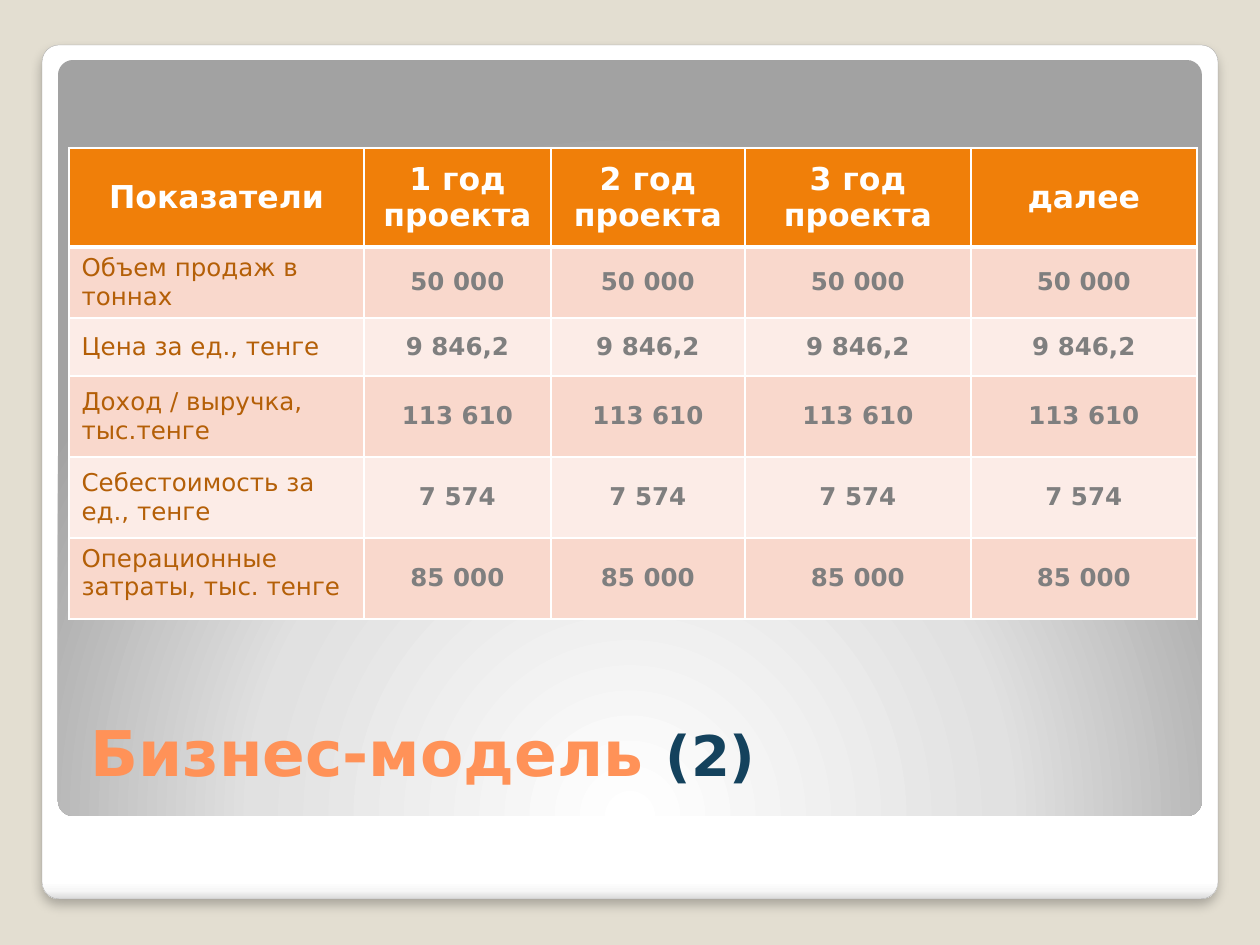
from dataclasses import dataclass

from lxml import etree
from pptx import Presentation
from pptx.dml.color import RGBColor
from pptx.enum.shapes import MSO_SHAPE
from pptx.enum.text import MSO_ANCHOR, MSO_AUTO_SIZE, PP_ALIGN
from pptx.oxml.ns import qn
from pptx.util import Emu, Pt

ROUNDED = MSO_SHAPE.ROUNDED_RECTANGLE
TOP, MIDDLE, BOTTOM = MSO_ANCHOR.TOP, MSO_ANCHOR.MIDDLE, MSO_ANCHOR.BOTTOM
LEFT, CENTER = PP_ALIGN.LEFT, PP_ALIGN.CENTER
NO_FIT = MSO_AUTO_SIZE.NONE
TITLE_ONLY = 5
PX_PER_INCH = 126


@dataclass(frozen=True)
class Theme:
    font: str = "DejaVu Sans"
    background: str = "E3DED1"
    outline: str = "A4A4A4"
    shadow: str = "000000"
    title: str = "FF9258"
    number: str = "14425D"
    header: str = "F07F09"
    white: str = "FFFFFF"
    label: str = "B45F07"
    value: str = "7F7F7F"
    bands: tuple = ("F9D8CC", "FCECE7")
    card: tuple = ((0, "FFFFFF"), (98, "FFFFFF"), (99, "F7F7F7"), (100, "DADADA"))
    panel: tuple = ((0, "FFFFFF"), (55, "E1E1E1"), (100, "A2A2A2"))
    title_size: int = 36
    number_size: int = 32
    header_size: int = 18
    body_size: int = 14


THEME = Theme()

HEADERS = ("Показатели", "1 год проекта", "2 год проекта", "3 год проекта", "далее")
INDICATORS = (
    ("Объем продаж в тоннах", "50 000"),
    ("Цена за ед., тенге", "9 846,2"),
    ("Доход / выручка, тыс.тенге", "113 610"),
    ("Себестоимость за ед., тенге", "7 574"),
    ("Операционные затраты, тыс. тенге", "85 000"),
)
COLUMN_WIDTHS = (295, 187, 194, 226, 226)
ROW_HEIGHTS = (99, 71, 58, 81, 81, 81)


def px(length):
    return Emu(round(length * 914400 / PX_PER_INCH))


def add_node(parent, tag, **attributes):
    values = {name: str(value) for name, value in attributes.items()}
    return etree.SubElement(parent, qn(tag), values)


def style_span(span, size, color, bold=True):
    span.font.name = THEME.font
    span.font.size = Pt(size)
    span.font.bold = bold
    span.font.color.rgb = RGBColor.from_string(color)


def set_gradient(shape, stops):
    shape.fill.gradient()
    gradient = shape.element.spPr.find(qn("a:gradFill"))
    for child in list(gradient):
        gradient.remove(child)
    stop_list = add_node(gradient, "a:gsLst")
    for position, color in stops:
        stop = add_node(stop_list, "a:gs", pos=position * 1000)
        add_node(stop, "a:srgbClr", val=color)
    return gradient


def add_rounded(page, left, top, width, height):
    box = page.shapes.add_shape(ROUNDED, px(left), px(top), px(width), px(height))
    box.adjustments[0] = 0.02
    box.shadow.inherit = False
    return box


def add_card(page):
    card = add_rounded(page, 42, 45, 1176, 854)
    gradient = set_gradient(card, THEME.card)
    add_node(gradient, "a:lin", ang=90 * 60000, scaled=0)
    card.line.color.rgb = RGBColor.from_string(THEME.outline)
    card.line.width = Pt(0.16)
    effects = card.element.spPr.find(qn("a:effectLst"))
    shadow = add_node(effects, "a:outerShdw", blurRad=Pt(6), dist=Pt(4),
                      dir=90 * 60000, algn="t", rotWithShape=0)
    color = add_node(shadow, "a:srgbClr", val=THEME.shadow)
    add_node(color, "a:alpha", val=25000)


def add_panel(page):
    panel = add_rounded(page, 58, 60, 1144, 756)
    gradient = set_gradient(panel, THEME.panel)
    focus = add_node(gradient, "a:path", path="circle")
    add_node(focus, "a:fillToRect", l=50000, t=175000, r=50000, b=-75000)
    panel.line.fill.background()


def place_title(page):
    title = page.shapes.title
    title.element.getparent().append(title.element)
    title.left, title.top, title.width, title.height = px(78), px(650), px(1128), px(145)
    frame = title.text_frame
    frame.text = "Бизнес-модель "
    frame.word_wrap = True
    frame.auto_size = NO_FIT
    frame.vertical_anchor = BOTTOM
    para = frame.paragraphs[0]
    para.alignment = LEFT
    style_span(para.runs[0], THEME.title_size, THEME.title)
    number = para.add_run()
    number.text = "(2)"
    style_span(number, THEME.number_size, THEME.number)


def set_borders(cell, top=1, bottom=1):
    properties = cell._tc.get_or_add_tcPr()
    widths = {"a:lnL": 1, "a:lnR": 1, "a:lnT": top, "a:lnB": bottom}
    for index, (side, width) in enumerate(widths.items()):
        border = add_node(properties, side, w=Pt(width))
        fill = add_node(border, "a:solidFill")
        add_node(fill, "a:srgbClr", val=THEME.white)
        properties.insert(index, border)


def fill_cell(cell, text, fill, size, color, bold=True, align=CENTER, anchor=MIDDLE):
    cell.text_frame.text = text
    cell.vertical_anchor = anchor
    cell.fill.solid()
    cell.fill.fore_color.rgb = RGBColor.from_string(fill)
    para = cell.text_frame.paragraphs[0]
    para.alignment = align
    style_span(para.runs[0], size, color, bold)


def add_indicator_table(page):
    frame = page.shapes.add_table(len(ROW_HEIGHTS), len(COLUMN_WIDTHS), px(69), px(148),
                                  px(sum(COLUMN_WIDTHS)), px(sum(ROW_HEIGHTS)))
    table = frame.table
    table.horz_banding = False
    for column, width in zip(table.columns, COLUMN_WIDTHS):
        column.width = px(width)
    for row, height in zip(table.rows, ROW_HEIGHTS):
        row.height = px(height)

    for column, header in enumerate(HEADERS):
        cell = table.cell(0, column)
        fill_cell(cell, header, THEME.header, THEME.header_size, THEME.white)
        set_borders(cell, bottom=3)

    for row, (label, value) in enumerate(INDICATORS, start=1):
        band = THEME.bands[(row - 1) % 2]
        label_anchor = TOP if row == len(INDICATORS) else MIDDLE
        fill_cell(table.cell(row, 0), label, band, THEME.body_size, THEME.label,
                  bold=False, align=LEFT, anchor=label_anchor)
        for column in range(1, len(HEADERS)):
            fill_cell(table.cell(row, column), value, band, THEME.body_size, THEME.value)
        for cell in table.rows[row].cells:
            set_borders(cell, top=3 if row == 1 else 1)


def main():
    deck = Presentation()
    deck.slide_width, deck.slide_height = px(1260), px(945)
    page = deck.slides.add_slide(deck.slide_layouts[TITLE_ONLY])
    page.background.fill.solid()
    page.background.fill.fore_color.rgb = RGBColor.from_string(THEME.background)
    add_card(page)
    add_panel(page)
    place_title(page)
    add_indicator_table(page)
    deck.save("out.pptx")


if __name__ == "__main__":
    main()
